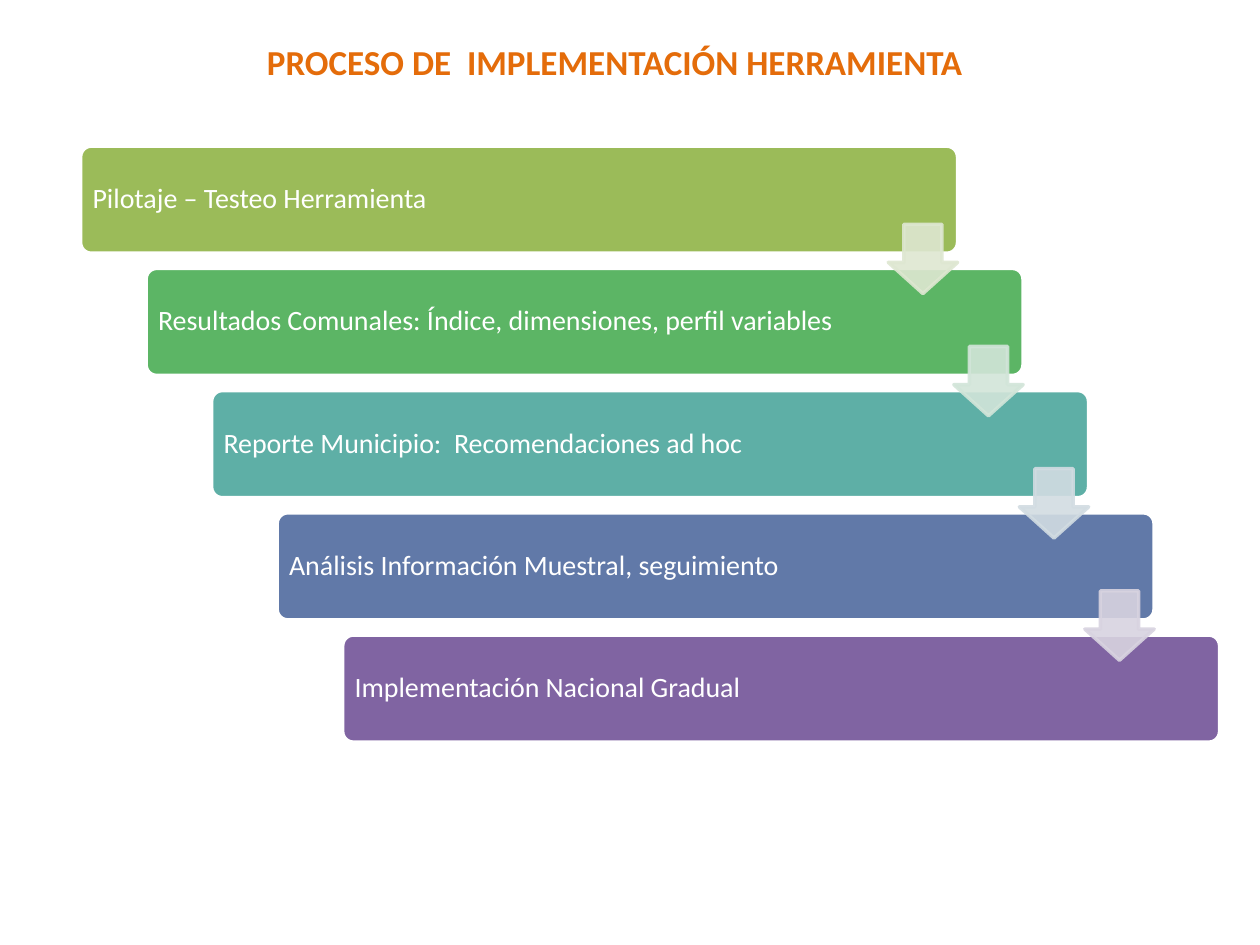
from pptx import Presentation
from pptx.dml.color import RGBColor
from pptx.enum.shapes import MSO_SHAPE as Shape
from pptx.enum.text import MSO_ANCHOR as Anchor, PP_ALIGN as Align
from pptx.oxml.ns import qn
from pptx.util import Inches, Pt
from lxml.etree import SubElement

COLORS = {
    "title": "E46C0A",
    "white": "FFFFFF",
    "bars": ["9BBB59", "5CB565", "5EAFA6", "6179A8", "8064A2"],
    "arrows": ["DEE7D1", "D2E5D9", "D2DCE2", "D8D3E0"],
}
STAGES = [
    "Pilotaje – Testeo Herramienta",
    "Resultados Comunales: Índice, dimensiones, perfil variables",
    "Reporte Municipio:  Recomendaciones ad hoc",
    "Análisis Información Muestral, seguimiento",
    "Implementación Nacional Gradual",
]
STEP_X, STEP_Y = 0.52, 0.97


def write_text(shape, text, *, size, color, font="Calibri", bold=False,
               align=Align.LEFT, anchor=Anchor.MIDDLE, inset=None, spacing=None):
    frame = shape.text_frame
    frame.word_wrap = True
    frame.vertical_anchor = anchor
    if inset is not None:
        frame.margin_left = frame.margin_right = Inches(inset)
        frame.margin_top = frame.margin_bottom = Inches(inset)
    para = frame.paragraphs[0]
    para.alignment = align
    if spacing is not None:
        para.line_spacing = spacing
    span = para.add_run()
    span.text = text
    span.font.name = font
    span.font.size = Pt(size)
    span.font.bold = bold
    span.font.color.rgb = RGBColor.from_string(color)


class ProcessSlide:
    line_width = Pt(2)

    def __init__(self, deck):
        self.page = deck.slides.add_slide(deck.slide_layouts[5])

    def title(self, text, left, top, width, height):
        box = self.page.shapes.title
        box.left, box.top = Inches(left), Inches(top)
        box.width, box.height = Inches(width), Inches(height)
        write_text(box, text, size=20, color=COLORS["title"], bold=True,
                   align=Align.CENTER, anchor=Anchor.TOP)

    def shape(self, kind, left, top, width, height, fill, line, adjustments):
        shape = self.page.shapes.add_shape(
            kind, Inches(left), Inches(top), Inches(width), Inches(height))
        shape.shadow.inherit = False
        for index, value in enumerate(adjustments):
            shape.adjustments[index] = value
        shape.fill.solid()
        shape.fill.fore_color.rgb = RGBColor.from_string(fill)
        shape.line.color.rgb = RGBColor.from_string(line)
        shape.line.width = self.line_width
        return shape

    def bar(self, text, left, top, color):
        bar = self.shape(Shape.ROUNDED_RECTANGLE, left, top, 6.96, 0.85,
                         color, COLORS["white"], [0.1])
        write_text(bar, text, size=16, color=COLORS["white"], inset=0.07, spacing=0.9)

    def arrow(self, left, top, color):
        arrow = self.shape(Shape.DOWN_ARROW, left, top, 0.55, 0.55,
                           color, color, [0.55, 0.45])
        for paint in arrow._element.spPr.iter(qn("a:srgbClr")):
            SubElement(paint, qn("a:alpha"), val="90000")


def main():
    deck = Presentation()
    deck.slide_width, deck.slide_height = Inches(10), Inches(7.5)
    slide = ProcessSlide(deck)
    slide.title("PROCESO DE  IMPLEMENTACIÓN HERRAMIENTA", 0.67, 0.27, 8.42, 0.44)
    for index, (text, color) in enumerate(zip(STAGES, COLORS["bars"])):
        slide.bar(text, 0.64 + index * STEP_X, 1.16 + index * STEP_Y, color)
    for index, color in enumerate(COLORS["arrows"]):
        slide.arrow(7.05 + index * STEP_X, 1.78 + index * STEP_Y, color)
    deck.save("out.pptx")


if __name__ == "__main__":
    main()
